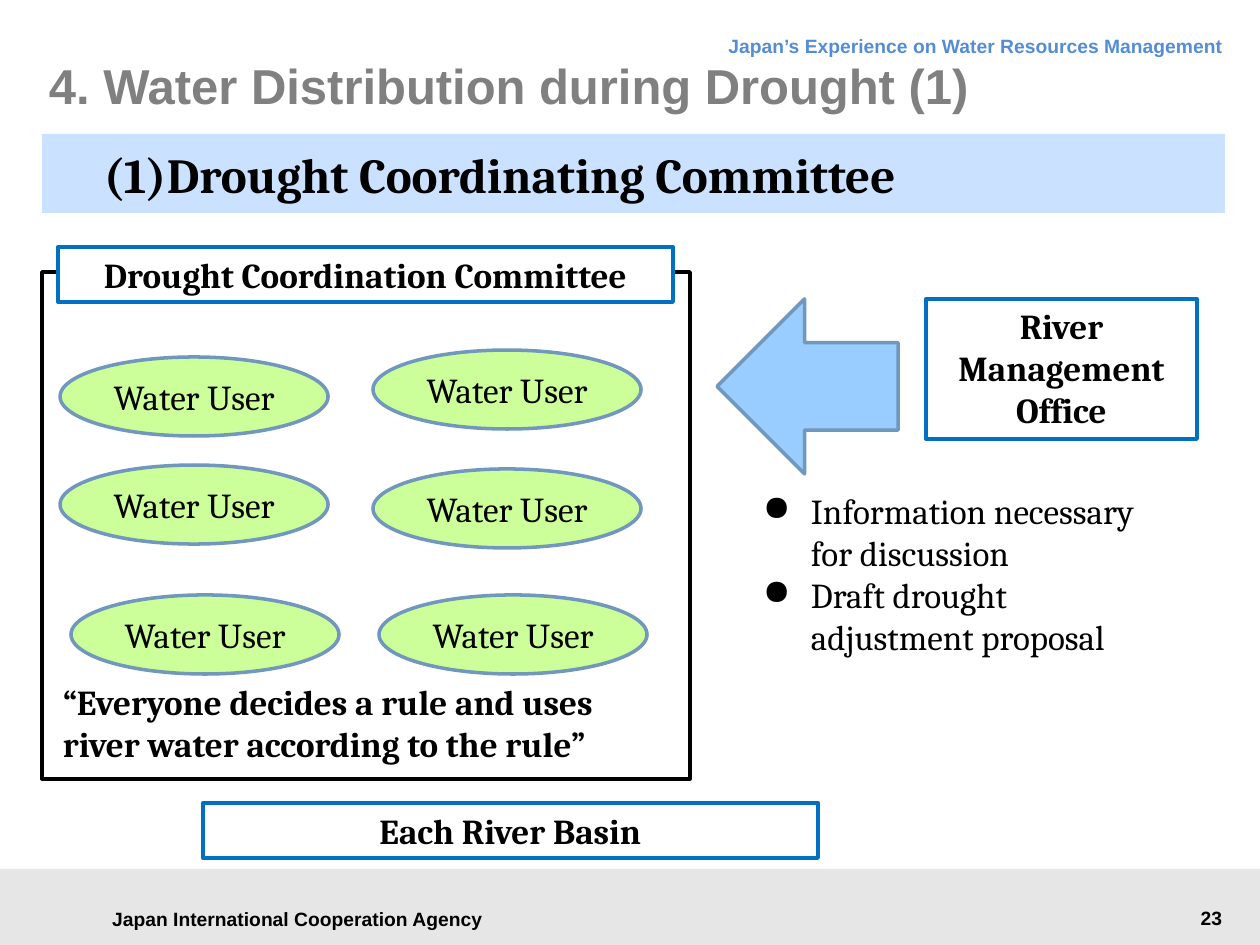
from pptx import Presentation
from pptx.dml.color import RGBColor
from pptx.enum.shapes import MSO_SHAPE as Shape
from pptx.enum.text import MSO_ANCHOR as Anchor, PP_ALIGN as Align
from pptx.oxml.ns import qn
from pptx.util import Emu, Pt
from lxml.etree import SubElement

SCALE = 914400 / 126
BLACK, WHITE, FRAME_BLUE, SOFT_BLUE = "000000", "FFFFFF", "0070C0", "7197BD"
LABEL_SIZE = (615, 55)
USER_SIZE = (268, 79)
USER_SPOTS = [(18, 85), (18, 193), (29, 323), (331, 78), (331, 197), (337, 323)]


def px(length):
    return Emu(round(length * SCALE))


def color(hex_value):
    return RGBColor.from_string(hex_value)


def place(box, left, top, width, height):
    """Turn a position relative to a region into slide lengths."""
    return [px(n) for n in (box[0] + left, box[1] + top, width, height)]


def add_shape(slide, kind, area, fill=None, line=None, weight=2):
    shape = slide.shapes.add_shape(kind, *area)
    shape.shadow.inherit = False
    if fill:
        shape.fill.solid()
        shape.fill.fore_color.rgb = color(fill)
    else:
        shape.fill.background()
    if line:
        shape.line.color.rgb = color(line)
        shape.line.width = Pt(weight)
    else:
        shape.line.fill.background()
    return shape


def write(shape, *lines, font="Cambria", size=20, ink=BLACK, bold=False,
          align=Align.LEFT, anchor=Anchor.TOP, insets=(13, 6, 13, 6),
          spacing=None, indent=0, hanging=0, bullet=None):
    frame = shape.text_frame
    frame.word_wrap = True
    frame.vertical_anchor = anchor
    (frame.margin_left, frame.margin_top,
     frame.margin_right, frame.margin_bottom) = map(px, insets)
    for i, line in enumerate(lines):
        paragraph = frame.paragraphs[0] if i == 0 else frame.add_paragraph()
        paragraph.alignment = align
        if spacing:
            paragraph.line_spacing = Pt(spacing)
        properties = paragraph._p.get_or_add_pPr()
        properties.set("marL", str(px(indent)))
        properties.set("indent", str(px(hanging)))
        if bullet:
            SubElement(properties, qn("a:buChar")).set("char", bullet)
        run = paragraph.add_run()
        run.text = line
        run.font.name, run.font.size, run.font.bold = font, Pt(size), bold
        run.font.color.rgb = color(ink)


def add_text(slide, area, *lines, **format):
    write(slide.shapes.add_textbox(*area), *lines, **format)


def add_label(slide, area, text):
    label = add_shape(slide, Shape.RECTANGLE, area, WHITE, FRAME_BLUE, 2.25)
    write(label, text, bold=True, align=Align.CENTER)


def add_footer(slide, box):
    add_shape(slide, Shape.RECTANGLE, place(box, 0, 0, 1260, 76), "E6E6E6")
    small = dict(font="Arial", size=11, bold=True)
    add_text(slide, place(box, 89, 28, 417, 43),
             "Japan International Cooperation Agency",
             align=Align.CENTER, anchor=Anchor.MIDDLE, **small)
    add_text(slide, place(box, 1037, 31, 198, 37), "23",
             align=Align.RIGHT, **small)


def add_header(slide, box):
    add_text(slide, place(box, 313, 0, 881, 48),
             "Japan’s Experience on Water Resources Management",
             font="Arial", size=11, ink="548DD4", bold=True,
             align=Align.RIGHT, spacing=18)
    add_text(slide, place(box, 7, 15, 1134, 100),
             "4. Water Distribution during Drought (1)",
             font="Arial", size=28, ink="808080", bold=True,
             anchor=Anchor.MIDDLE, insets=(0, 0, 0, 0))
    banner = add_shape(slide, Shape.RECTANGLE,
                       place(box, 0, 114, 1183, 79), "CAE2FF")
    write(banner, "(1)\tDrought Coordinating Committee", size=28, bold=True,
          insets=(54, 10, 44, 10), indent=8)


def add_committee(slide, box):
    add_shape(slide, Shape.RECTANGLE, place(box, 0, 0, 648, 507), line=BLACK)
    add_label(slide, place(box, 16, -25, *LABEL_SIZE),
              "Drought Coordination Committee")
    for left, top in USER_SPOTS:
        user = add_shape(slide, Shape.OVAL, place(box, left, top, *USER_SIZE),
                         "CCFF9A", SOFT_BLUE)
        write(user, "Water User", align=Align.CENTER, anchor=Anchor.MIDDLE)
    add_text(slide, place(box, 8, 402, 630, 97),
             "“Everyone decides a rule and uses river water according to the rule”",
             bold=True)


def add_river_office(slide, box):
    add_shape(slide, Shape.LEFT_ARROW, place(box, 0, 0, 181, 175),
              "99CCFF", SOFT_BLUE)
    add_label(slide, place(box, 209, 0, 271, 140), "River Management Office")
    add_text(slide, place(box, 33, 184, 440, 183),
             "Information necessary for discussion",
             "Draft drought adjustment proposal",
             indent=48, hanging=-48, bullet="●")


def main():
    deck = Presentation()
    deck.slide_width, deck.slide_height = px(1260), px(945)
    slide = deck.slides.add_slide(deck.slide_layouts[6])
    add_footer(slide, (0, 869))
    add_header(slide, (42, 20))
    add_committee(slide, (42, 272))
    add_label(slide, place((203, 803), 0, 0, *LABEL_SIZE), "Each River Basin")
    add_river_office(slide, (717, 299))
    deck.save("out.pptx")


if __name__ == "__main__":
    main()
